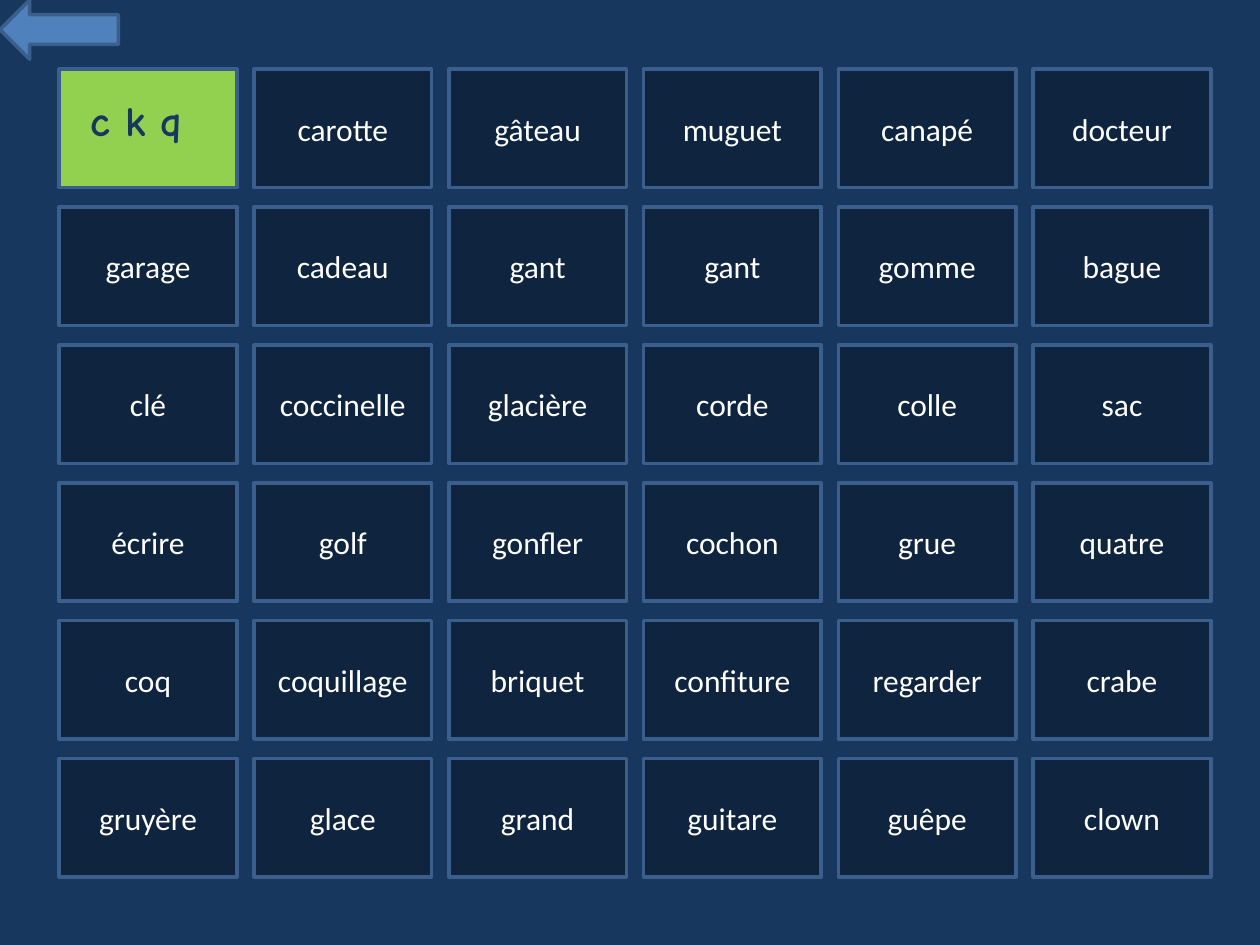
from pptx import Presentation
from pptx.dml.color import RGBColor
from pptx.enum.shapes import MSO_SHAPE as SHAPE
from pptx.enum.text import MSO_ANCHOR as ANCHOR, PP_ALIGN as ALIGN
from pptx.util import Inches, Pt

NAVY = RGBColor(0x17, 0x37, 0x5E)
DARK = RGBColor(0x0F, 0x24, 0x3E)
GREEN = RGBColor(0x92, 0xD0, 0x50)
BLUE = RGBColor(0x4F, 0x81, 0xBD)
EDGE = RGBColor(0x3A, 0x5F, 0x8C)
WHITE = RGBColor(0xFF, 0xFF, 0xFF)

TITLE = "c k q"
WORDS = [
    [TITLE, "carotte", "gâteau", "muguet", "canapé", "docteur"],
    ["garage", "cadeau", "gant", "gant", "gomme", "bague"],
    ["clé", "coccinelle", "glacière", "corde", "colle", "sac"],
    ["écrire", "golf", "gonfler", "cochon", "grue", "quatre"],
    ["coq", "coquillage", "briquet", "confiture", "regarder", "crabe"],
    ["gruyère", "glace", "grand", "guitare", "guêpe", "clown"],
]
CARD_W, CARD_H = Inches(1.41), Inches(0.94)


def add_box(s, kind, fill, left, top, width, height):
    sp = s.shapes.add_shape(kind, left, top, width, height)
    sp.shadow.inherit = False
    sp.fill.solid()
    sp.fill.fore_color.rgb = fill
    sp.line.color.rgb = EDGE
    sp.line.width = Pt(2)
    return sp


def set_text(sp, text, font, size, color, bold=False):
    p = sp.text_frame.paragraphs[0]
    p.text = text
    p.font.name = font
    p.font.size = Pt(size)
    p.font.color.rgb = color
    p.font.bold = bold
    return p


def add_title_card(s, left, top):
    add_box(s, SHAPE.RECTANGLE, GREEN, left, top, CARD_W, CARD_H)
    sp = s.shapes.add_textbox(left + Inches(0.15), top + Inches(0.15), Inches(1.17), Inches(0.5))
    sp.text_frame.word_wrap = True
    set_text(sp, TITLE, "Comic Neue", 24, NAVY, bold=True)


def add_word_card(s, word, left, top):
    sp = add_box(s, SHAPE.RECTANGLE, DARK, left, top, CARD_W, CARD_H)
    sp.text_frame.word_wrap = True
    sp.text_frame.vertical_anchor = ANCHOR.MIDDLE
    set_text(sp, word, "Calibri", 18, WHITE).alignment = ALIGN.CENTER


def add_word_grid(s, left, top, width, height):
    step_x = (width - CARD_W) / (len(WORDS[0]) - 1)
    step_y = (height - CARD_H) / (len(WORDS) - 1)
    for i, row in enumerate(WORDS):
        for j, word in enumerate(row):
            x, y = round(left + j * step_x), round(top + i * step_y)
            if word == TITLE:
                add_title_card(s, x, y)
            else:
                add_word_card(s, word, x, y)


def main():
    prs = Presentation()
    prs.slide_width, prs.slide_height = Inches(10), Inches(7.5)
    s = prs.slides.add_slide(prs.slide_layouts[6])
    s.background.fill.solid()
    s.background.fill.fore_color.rgb = NAVY
    add_word_grid(s, Inches(0.47), Inches(0.55), Inches(9.14), Inches(6.41))
    add_box(s, SHAPE.LEFT_ARROW, BLUE, 0, 0, Inches(0.94), Inches(0.47))
    prs.save("out.pptx")


if __name__ == "__main__":
    main()
